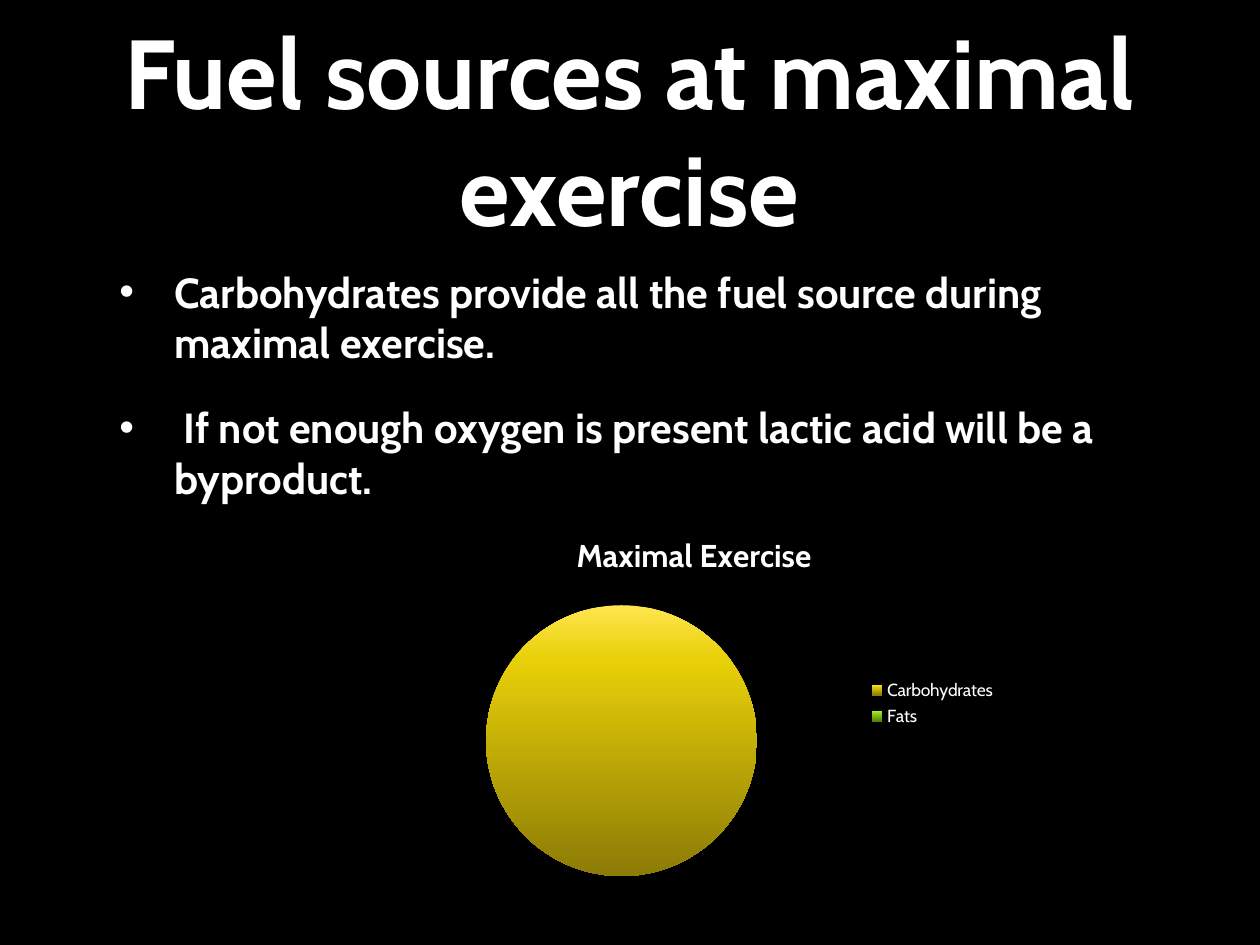
"""Build the slide on fuel sources at maximal exercise."""
from dataclasses import dataclass
from pptx import Presentation
from pptx.chart.data import CategoryChartData as Data
from pptx.dml.color import RGBColor as RGB
from pptx.enum.chart import XL_CHART_TYPE as Kind, XL_LEGEND_POSITION as Side
from pptx.enum.text import MSO_ANCHOR as Anchor, PP_ALIGN as Align
from pptx.oxml import parse_xml
from pptx.oxml.ns import nsdecls
from pptx.util import Emu, Pt


@dataclass(frozen=True)
class Theme:
    font: str = "Cabin"
    back: str = "000000"
    ink: str = "FFFFFF"
    head: int = 56
    body: int = 24
    title: int = 18
    small: int = 10
    gap: int = 20


THEME = Theme()
SCALE = 914400 // 126
SIZE = (1260, 945)
HEAD = "Fuel sources at maximal exercise"
HEAD_BOX = (107, 15, 1045, 228)
POINTS = [
    "Carbohydrates provide all the fuel source during maximal exercise.",
    " If not enough oxygen is present lactic acid will be a byproduct.",
]
BODY_BOX = (107, 260, 1045, 544)
INDENT = 55
PIE_BOX = (379, 514, 630, 378)
PIE_PLOT = (107, 89, 272, 272)
PIE_NAME = "Maximal Exercise"
SLICES = [
    ("Carbohydrates", 100, ("FFE650", "E8D008", "8C7B06")),
    ("Fats", 0, ("B8F250", "96DC1C", "588404")),
]
STOPS = (0, 20, 100)


def px(*vals):
    return [Emu(val * SCALE) for val in vals]


def style(font, size, bold=True):
    font.name, font.size, font.bold = THEME.font, Pt(size), bold
    font.color.rgb = RGB.from_string(THEME.ink)


def add_box(slide, box, lines, size):
    frame = slide.shapes.add_textbox(*px(*box)).text_frame
    frame.word_wrap = True
    for num, line in enumerate(lines):
        para = frame.add_paragraph() if num else frame.paragraphs[0]
        run = para.add_run()
        run.text = line
        style(run.font, size)
    return frame


def add_bullets(frame):
    for num, para in enumerate(frame.paragraphs):
        props = para._p.get_or_add_pPr()
        left = INDENT * SCALE
        props.set("marL", str(left))
        props.set("indent", str(-left))
        props.append(parse_xml(f'<a:buFont {nsdecls("a")} typeface="Arial"/>'))
        props.append(parse_xml(f'<a:buChar {nsdecls("a")} char="•"/>'))
        if num:
            para.space_before = Pt(THEME.gap)


def shade(point, tones):
    fill = point.format.fill
    fill.gradient()
    fill.gradient_angle = 270
    stops = "".join(
        f'<a:gs pos="{pos * 1000}"><a:srgbClr val="{tone}"/></a:gs>'
        for pos, tone in zip(STOPS, tones))
    new = parse_xml(f'<a:gsLst {nsdecls("a")}>{stops}</a:gsLst>')
    old = point.format._element.spPr.find(".//" + new.tag) if hasattr(
        point.format._element, "spPr") else point.format._element.find(".//" + new.tag)
    old.getparent().replace(old, new)
    point.format.line.fill.background()


def place_plot(chart):
    area = chart._chartSpace.chart.plotArea
    for old in area.findall("{*}layout"):
        area.remove(old)
    parts = zip("xywh", PIE_PLOT, PIE_BOX[2:] * 2)
    spots = "".join(f'<c:{key} val="{val / full:.2f}"/>' for key, val, full in parts)
    area.insert(0, parse_xml(
        f'<c:layout {nsdecls("c")}><c:manualLayout><c:layoutTarget val="inner"/>'
        f'<c:xMode val="edge"/><c:yMode val="edge"/>{spots}'
        '</c:manualLayout></c:layout>'))


def add_pie(slide):
    names, vals, tones = zip(*SLICES)
    data = Data()
    data.categories = names
    data.add_series(PIE_NAME, vals)
    chart = slide.shapes.add_chart(Kind.PIE, *px(*PIE_BOX), data).chart
    style(chart.font, THEME.small, False)
    chart.has_title = True
    run = chart.chart_title.text_frame.paragraphs[0].add_run()
    run.text = PIE_NAME
    style(run.font, THEME.title)
    chart.has_legend = True
    chart.legend.position = Side.RIGHT
    chart.legend.include_in_layout = False
    style(chart.legend.font, THEME.small, False)
    plot = chart.plots[0]
    plot.vary_by_categories = True
    for num, tone in enumerate(tones):
        shade(plot.series[0].points[num], tone)
    place_plot(chart)


def main():
    deck = Presentation()
    deck.slide_width, deck.slide_height = px(*SIZE)
    slide = deck.slides.add_slide(deck.slide_layouts[6])
    slide.background.fill.solid()
    slide.background.fill.fore_color.rgb = RGB.from_string(THEME.back)
    head = add_box(slide, HEAD_BOX, [HEAD], THEME.head)
    head.vertical_anchor = Anchor.MIDDLE
    head.paragraphs[0].alignment = Align.CENTER
    add_bullets(add_box(slide, BODY_BOX, POINTS, THEME.body))
    add_pie(slide)
    deck.save("out.pptx")


if __name__ == "__main__":
    main()
